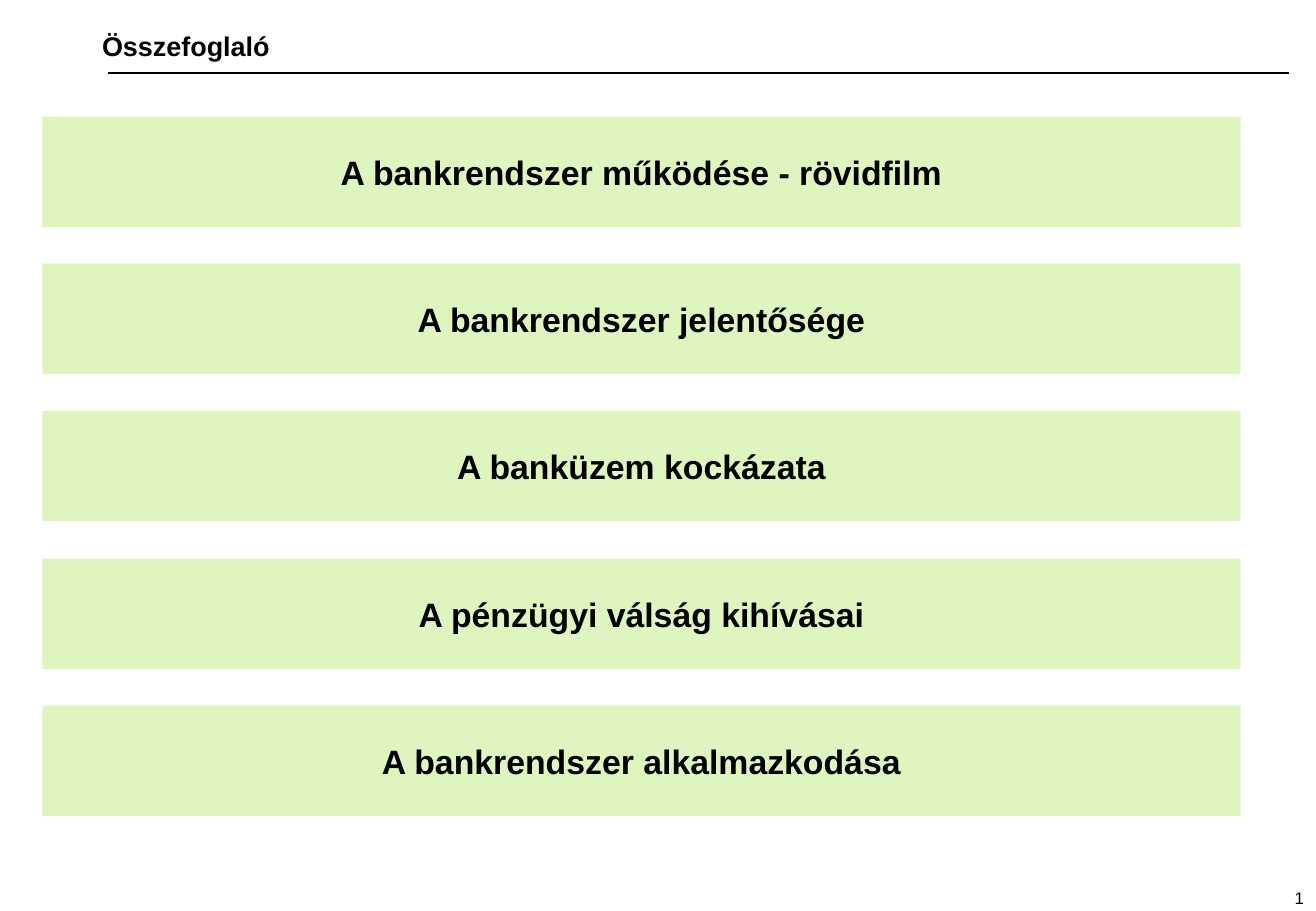
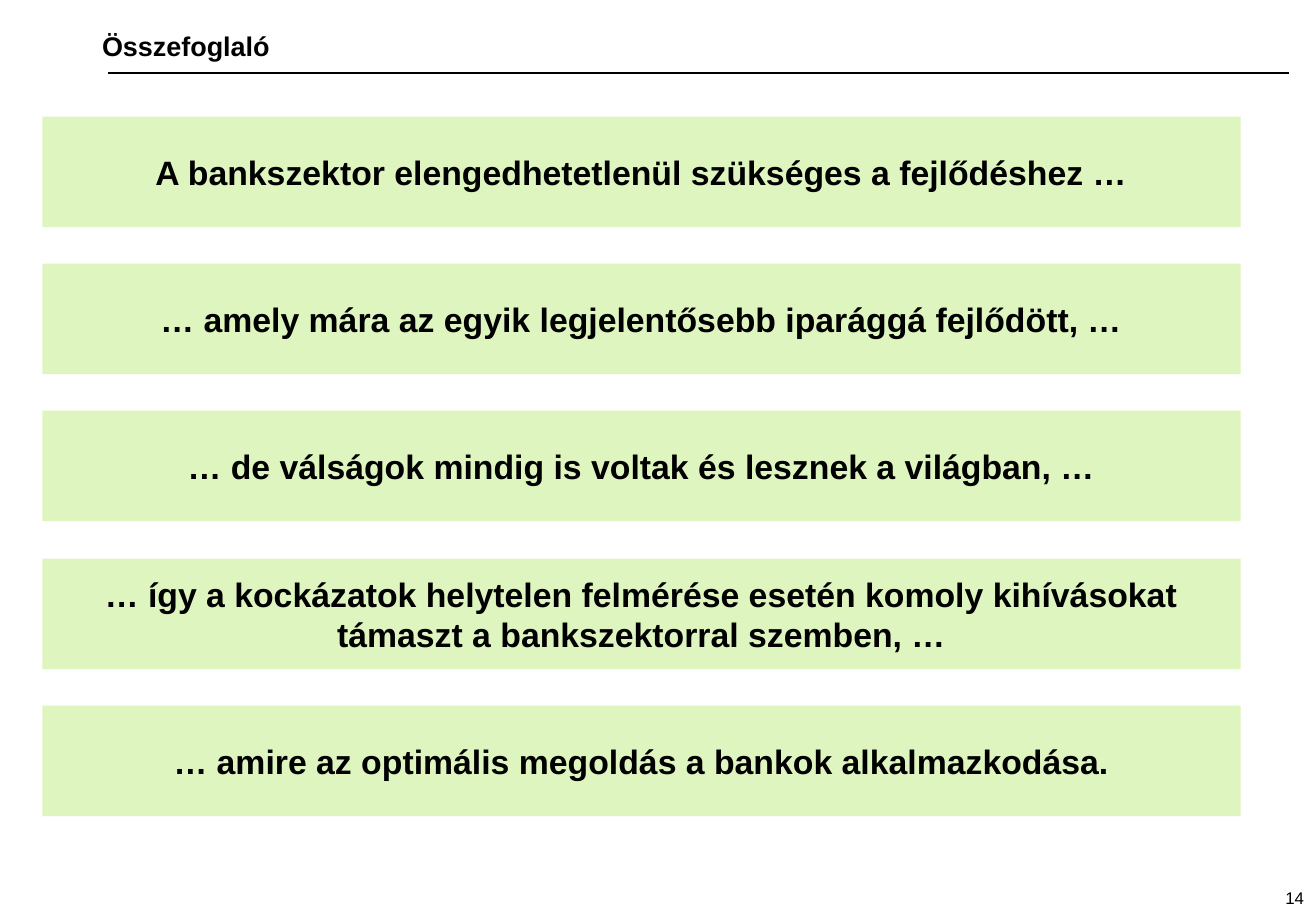
import pptx
import pptx.util
import pptx.dml.color
import pptx.enum.shapes
import pptx.enum.text
import pptx.oxml
from dataclasses import dataclass

TITLE = "Összefoglaló"
SLIDES = [
    ("1", [
        "A bankrendszer működése - rövidfilm",
        "A bankrendszer jelentősége",
        "A banküzem kockázata",
        "A pénzügyi válság kihívásai",
        "A bankrendszer alkalmazkodása",
    ]),
    ("14", [
        "A bankszektor elengedhetetlenül szükséges a fejlődéshez …",
        "… amely mára az egyik legjelentősebb iparággá fejlődött, …",
        "… de válságok mindig is voltak és lesznek a világban, …",
        "… így a kockázatok helytelen felmérése esetén komoly kihívásokat "
        "támaszt a bankszektorral szemben, …",
        "… amire az optimális megoldás a bankok alkalmazkodása.",
    ]),
]


@dataclass(frozen=True)
class Theme:
    font: str = "Arial"
    ink: str = "000000"
    band: str = "DFF5C0"
    head: int = 16
    body: int = 20
    foot: int = 10
    rule: int = 1


THEME = Theme()
ALIGN = pptx.enum.text.PP_ALIGN
ANCHOR = pptx.enum.text.MSO_ANCHOR
SCALE = 9144
SIZE = (1083, 750)
HEAD = (84, 16, 999, 35)
RULE = (89, 60, 1061, 60)
FOOT = (999, 729, 84, 20)
LEFT, WIDE, HIGH = 35, 986, 91
FIRST, LAST = 96, 581


def px(*vals):
    return [pptx.util.Emu(val * SCALE) for val in vals]


def color(code):
    return pptx.dml.color.RGBColor.from_string(code)


def write(shape, text, size, align, anchor, bold=True, inset=(10, 5), space=None):
    frame = shape.text_frame
    frame.word_wrap = True
    frame.auto_size = pptx.enum.text.MSO_AUTO_SIZE.NONE
    frame.vertical_anchor = anchor
    side, edge = px(*inset)
    frame.margin_left = frame.margin_right = side
    frame.margin_top = frame.margin_bottom = edge
    para = frame.paragraphs[0]
    para.alignment = align
    para.line_spacing = space
    run = para.add_run()
    run.text = text
    run.font.name = THEME.font
    run.font.size = pptx.util.Pt(size)
    run.font.bold = bold
    run.font.color.rgb = color(THEME.ink)


def add_frame(slide, page):
    title = slide.shapes.title
    title.left, title.top, title.width, title.height = px(*HEAD)
    write(title, TITLE, THEME.head, ALIGN.LEFT, ANCHOR.BOTTOM,
          inset=(0, 0), space=0.9)
    rule = slide.shapes.add_connector(
        pptx.enum.shapes.MSO_CONNECTOR.STRAIGHT, *px(*RULE))
    rule.line.color.rgb = color(THEME.ink)
    rule.line.width = pptx.util.Pt(THEME.rule)
    rule._element.spPr.append(pptx.oxml.parse_xml(
        '<a:effectLst xmlns:a='
        '"http://schemas.openxmlformats.org/drawingml/2006/main"/>'))
    foot = slide.shapes.add_textbox(*px(*FOOT))
    write(foot, page, THEME.foot, ALIGN.RIGHT, ANCHOR.TOP,
          bold=False, space=0.8)


def add_bands(slide, texts):
    step = (LAST - FIRST) / (len(texts) - 1)
    for index, text in enumerate(texts):
        top = round(FIRST + index * step)
        band = slide.shapes.add_shape(
            pptx.enum.shapes.MSO_SHAPE.RECTANGLE, *px(LEFT, top, WIDE, HIGH))
        band.shadow.inherit = False
        band.fill.solid()
        band.fill.fore_color.rgb = color(THEME.band)
        band.line.fill.background()
        write(band, text, THEME.body, ALIGN.CENTER, ANCHOR.MIDDLE)


def main():
    deck = pptx.Presentation()
    deck.slide_width, deck.slide_height = px(*SIZE)
    for page, texts in SLIDES:
        slide = deck.slides.add_slide(deck.slide_layouts[5])
        add_frame(slide, page)
        add_bands(slide, texts)
    deck.save("out.pptx")


if __name__ == "__main__":
    main()
